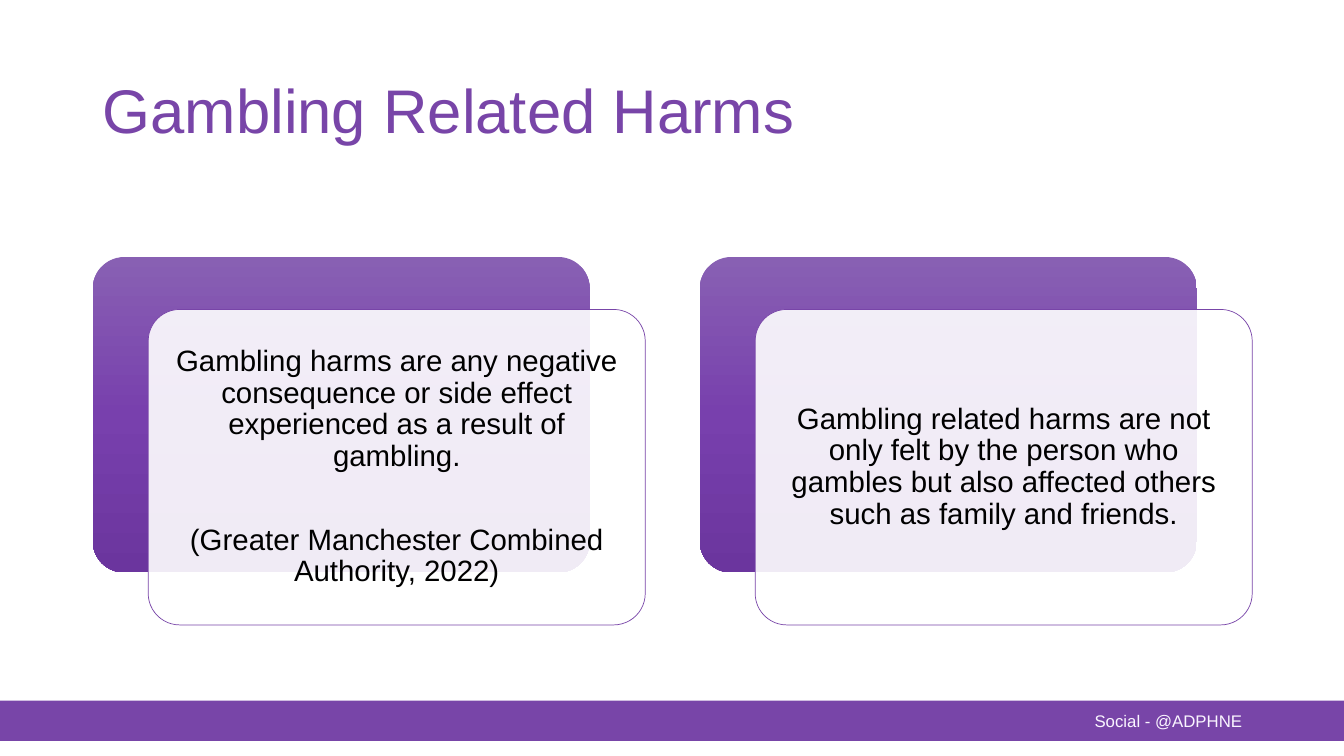
import copy

import pptx
import pptx.dml.color
import pptx.enum.shapes
import pptx.enum.text
import pptx.oxml
import pptx.oxml.ns
import pptx.util
from pptx.util import Inches

RGBColor = pptx.dml.color.RGBColor
Align = pptx.enum.text.PP_ALIGN
Shapes = pptx.enum.shapes.MSO_SHAPE

PURPLE = RGBColor(0x78, 0x45, 0xA8)
GRADIENT = [
    (0, RGBColor(0x88, 0x60, 0xB3)),
    (0.5, RGBColor(0x78, 0x40, 0xAD)),
    (1, RGBColor(0x6B, 0x35, 0x9E)),
]
PALE = RGBColor(0xFA, 0xF5, 0xFF)
WHITE = RGBColor(0xFF, 0xFF, 0xFF)
BLACK = RGBColor(0, 0, 0)

CARDS = [
    [
        "Gambling harms are any negative consequence or side effect "
        "experienced as a result of gambling.",
        "(Greater Manchester Combined Authority, 2022)",
    ],
    [
        "Gambling related harms are not only felt by the person who gambles "
        "but also affected others such as family and friends.",
    ],
]
CARD_LEFT, CARD_TOP, CARD_WIDTH, CARD_HEIGHT = 0.92, 2.55, 4.93, 3.13
CARD_PITCH = 6.02
SHIFT_X, SHIFT_Y = 0.55, 0.52
TEXT_INSET = 0.09

deck = pptx.Presentation()
deck.slide_width, deck.slide_height = Inches(13.33), Inches(7.5)
page = deck.slides.add_slide(deck.slide_layouts[6])


def add_panel(kind, left, top, width, height):
    """Add a preset shape without shadow or outline."""
    panel = page.shapes.add_shape(
        kind, Inches(left), Inches(top), Inches(width), Inches(height))
    panel.shadow.inherit = False
    panel.line.fill.background()
    if kind == Shapes.ROUNDED_RECTANGLE:
        panel.adjustments[0] = 0.1
    return panel


def add_text(paragraphs, left, top, width, height, *, size, color,
             align=Align.LEFT, spacing=1.0, gap=0, inset=0.1):
    box = page.shapes.add_textbox(
        Inches(left), Inches(top), Inches(width), Inches(height))
    frame = box.text_frame
    frame.word_wrap = True
    frame.vertical_anchor = pptx.enum.text.MSO_ANCHOR.MIDDLE
    frame.margin_left = frame.margin_right = Inches(inset)
    frame.margin_top = frame.margin_bottom = Inches(min(inset, 0.09))
    for index, text in enumerate(paragraphs):
        para = frame.add_paragraph() if index else frame.paragraphs[0]
        para.alignment = align
        para.line_spacing = spacing
        if index:
            para.space_before = pptx.util.Pt(gap)
        span = para.add_run()
        span.text = text
        span.font.name = "Arial"
        span.font.size = pptx.util.Pt(size)
        span.font.color.rgb = color


footer = add_panel(Shapes.RECTANGLE, 0, 6.95, 13.33, 0.4)
footer.fill.solid()
footer.fill.fore_color.rgb = PURPLE

add_text(["Gambling Related Harms"], 0.92, 0.4, 8.93, 1.45,
         size=44, color=PURPLE, spacing=0.9)
add_text(["Social - @ADPHNE"], 9.42, 6.95, 3, 0.4,
         size=12, color=PALE, align=Align.RIGHT)

for column, paragraphs in enumerate(CARDS):
    left = CARD_LEFT + column * CARD_PITCH
    back = add_panel(Shapes.ROUNDED_RECTANGLE, left, CARD_TOP, CARD_WIDTH, CARD_HEIGHT)
    back.fill.gradient()
    back.fill.gradient_angle = 270
    stop_list = back.element.find(".//" + pptx.oxml.ns.qn("a:gsLst"))
    stop_list.insert(1, copy.deepcopy(stop_list[0]))
    for stop, (position, color) in zip(back.fill.gradient_stops, GRADIENT):
        stop.position = position
        stop.color.rgb = color

    left, top = left + SHIFT_X, CARD_TOP + SHIFT_Y
    front = add_panel(Shapes.ROUNDED_RECTANGLE, left, top, CARD_WIDTH, CARD_HEIGHT)
    front.fill.solid()
    front.fill.fore_color.rgb = WHITE
    white = front.element.spPr.find(".//" + pptx.oxml.ns.qn("a:srgbClr"))
    white.append(pptx.oxml.parse_xml(
        f'<a:alpha {pptx.oxml.ns.nsdecls("a")} val="90000"/>'))
    front.line.color.rgb = PURPLE
    front.line.width = pptx.util.Pt(0.5)

    add_text(paragraphs, left + TEXT_INSET, top + TEXT_INSET,
             CARD_WIDTH - 2 * TEXT_INSET, CARD_HEIGHT - 2 * TEXT_INSET,
             size=21, color=BLACK, align=Align.CENTER, spacing=0.9,
             gap=37, inset=TEXT_INSET)

deck.save("out.pptx")
